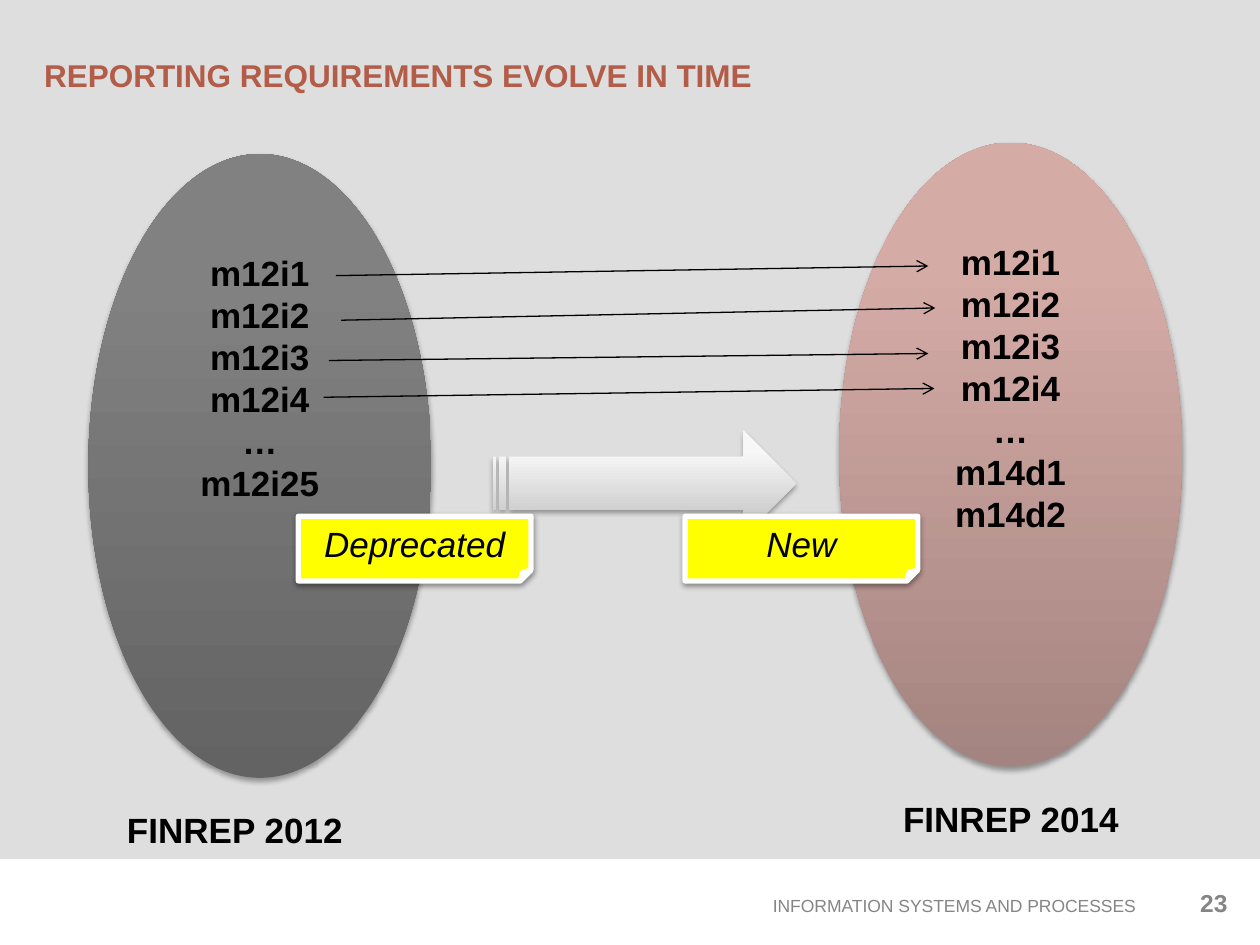
from copy import deepcopy
from dataclasses import dataclass

from lxml import etree
from pptx import Presentation
from pptx.dml.color import RGBColor
from pptx.enum import shapes, text
from pptx.oxml import ns
from pptx.util import Pt


@dataclass(frozen=True)
class Theme:
    font: str = "Arial"
    backdrop: str = "DEDEDE"
    title: str = "B35C48"
    muted: str = "858585"
    ink: str = "000000"
    note: str = "FFFF00"
    note_edge: str = "FFFFFF"
    old_set: tuple = ((0, "636363"), (80, "818181"), (100, "818181"))
    new_set: tuple = ((0, "A48480"), (80, "D5ABA6"), (100, "D7ABA6"))
    transition: tuple = ((0, "BEBEBE"), (80, "F7F7F7"), (100, "F8F8F8"))
    title_size: int = 18
    body_size: int = 20
    footer_size: int = 10
    number_size: int = 14


THEME = Theme()
SHAPE = shapes.MSO_SHAPE
ALIGN = text.PP_ALIGN
ANCHOR = text.MSO_ANCHOR


def rgb(value):
    return RGBColor.from_string(value)


def points(*values):
    return [Pt(value) for value in values]


def write(frame, lines, size, color, align, anchor=ANCHOR.TOP, wrap=True, bold=False, italic=False):
    frame.word_wrap = wrap
    frame.vertical_anchor = anchor
    for index, line in enumerate(lines):
        paragraph = frame.add_paragraph() if index else frame.paragraphs[0]
        paragraph.alignment = align
        run = paragraph.add_run()
        run.text = line
        font = run.font
        font.name, font.size, font.bold, font.italic = THEME.font, Pt(size), bold, italic
        font.color.rgb = rgb(color)


def add_label(slide, box, line, size, color, align, **style):
    label = slide.shapes.add_textbox(*points(*box))
    write(label.text_frame, [line], size, color, align, **style)


def add_plain(slide, kind, box):
    shape = slide.shapes.add_shape(kind, *points(*box))
    shape.shadow.inherit = False
    shape.line.fill.background()
    return shape


def cast_shadow(shape, opacity, distance):
    effects = shape._element.spPr.find(ns.qn("a:effectLst"))
    shadow = etree.SubElement(effects, ns.qn("a:outerShdw"), blurRad=str(Pt(3.1)),
                              dist=str(Pt(distance)), dir="5400000", rotWithShape="0")
    color = etree.SubElement(shadow, ns.qn("a:srgbClr"), val=THEME.ink)
    etree.SubElement(color, ns.qn("a:alpha"), val=str(opacity * 1000))


def fill_gradient(shape, stops):
    shape.fill.gradient()
    shape.fill.gradient_angle = 90
    stop_list = shape._element.spPr.find(ns.qn("a:gradFill")).find(ns.qn("a:gsLst"))
    stop_list.append(deepcopy(stop_list[-1]))
    for stop, (position, color) in zip(shape.fill.gradient_stops, stops):
        stop.position = position / 100
        stop.color.rgb = rgb(color)


def add_gradient_shape(slide, kind, box, stops):
    shape = add_plain(slide, kind, box)
    fill_gradient(shape, stops)
    cast_shadow(shape, 35, 1.8)
    return shape


def add_frame(slide, box):
    left, top, width, height = box
    backdrop = add_plain(slide, SHAPE.RECTANGLE, (left, top, width, 491))
    backdrop.fill.solid()
    backdrop.fill.fore_color.rgb = rgb(THEME.backdrop)
    slide.shapes._spTree.insert(2, backdrop._element)

    title = slide.shapes.title
    title.left, title.top, title.width, title.height = points(left + 18, top + 8.5, 466.5, 68.5)
    title.text_frame.auto_size = text.MSO_AUTO_SIZE.NONE
    write(title.text_frame, ["REPORTING REQUIREMENTS EVOLVE IN TIME"], THEME.title_size,
          THEME.title, ALIGN.LEFT, ANCHOR.MIDDLE, bold=True)

    add_label(slide, (left + 222, top + height - 32.5, 434, 19.5),
              "INFORMATION SYSTEMS AND PROCESSES", THEME.footer_size, THEME.muted,
              ALIGN.RIGHT, anchor=ANCHOR.MIDDLE)
    add_label(slide, (left + 667.5, top + height - 36, 41, 25), "23", THEME.number_size,
              THEME.muted, ALIGN.RIGHT, bold=True)


def add_item_set(slide, box, items, stops, caption, caption_indent):
    left, top, width, height = box
    ellipse = add_gradient_shape(slide, SHAPE.OVAL, box, stops)
    write(ellipse.text_frame, items, THEME.body_size, THEME.ink, ALIGN.CENTER, bold=True)
    add_label(slide, (left + caption_indent, top + height + 14, 139, 31.5), caption,
              THEME.body_size, THEME.ink, ALIGN.LEFT, wrap=False, bold=True)


def add_mappings(slide, box):
    left, top, width, height = box
    ends = (
        (7, 7.5, 345.5, 2),
        (10, 33, 349.5, 26),
        (3, 56, 345.5, 52),
        (0, 77, 349, 72),
    )
    for start_x, start_y, end_x, end_y in ends:
        mapping = slide.shapes.add_connector(
            shapes.MSO_CONNECTOR.STRAIGHT,
            *points(left + start_x, top + start_y, left + end_x, top + end_y))
        mapping.line.width = Pt(0.75)
        mapping.line.color.rgb = rgb(THEME.ink)
        etree.SubElement(mapping.line._get_or_add_ln(), ns.qn("a:tailEnd"), type="arrow")
        etree.SubElement(mapping._element.spPr, ns.qn("a:effectLst"))


def add_note(slide, box, line):
    note = add_plain(slide, SHAPE.FOLDED_CORNER, box)
    note.fill.solid()
    note.fill.fore_color.rgb = rgb(THEME.note)
    note.line.color.rgb = rgb(THEME.note_edge)
    note.line.width = Pt(3)
    cast_shadow(note, 38, 1.6)
    write(note.text_frame, [line], THEME.body_size, THEME.ink, ALIGN.CENTER,
          ANCHOR.MIDDLE, italic=True)


def main():
    deck = Presentation()
    deck.slide_width, deck.slide_height = points(720, 540)
    slide = deck.slides.add_slide(deck.slide_layouts[5])
    kept_items = ["m12i1", "m12i2", "m12i3", "m12i4", "…"]

    add_frame(slide, (0, 0, 720, 540))
    add_gradient_shape(slide, SHAPE.STRIPED_RIGHT_ARROW, (281.5, 246, 173.5, 60.5),
                       THEME.transition)
    add_item_set(slide, (50.5, 88, 196, 356.5), kept_items + ["m12i25"],
                 THEME.old_set, "FINREP 2012", 15)
    add_item_set(slide, (479.5, 81.5, 196, 356.5), kept_items + ["m14d1", "m14d2"],
                 THEME.new_set, "FINREP 2014", 29.5)
    add_mappings(slide, (185, 150, 350, 77))
    for left, line in ((170.5, "Deprecated"), (391.5, "New")):
        add_note(slide, (left, 295, 133, 37), line)
    deck.save("out.pptx")


if __name__ == "__main__":
    main()
